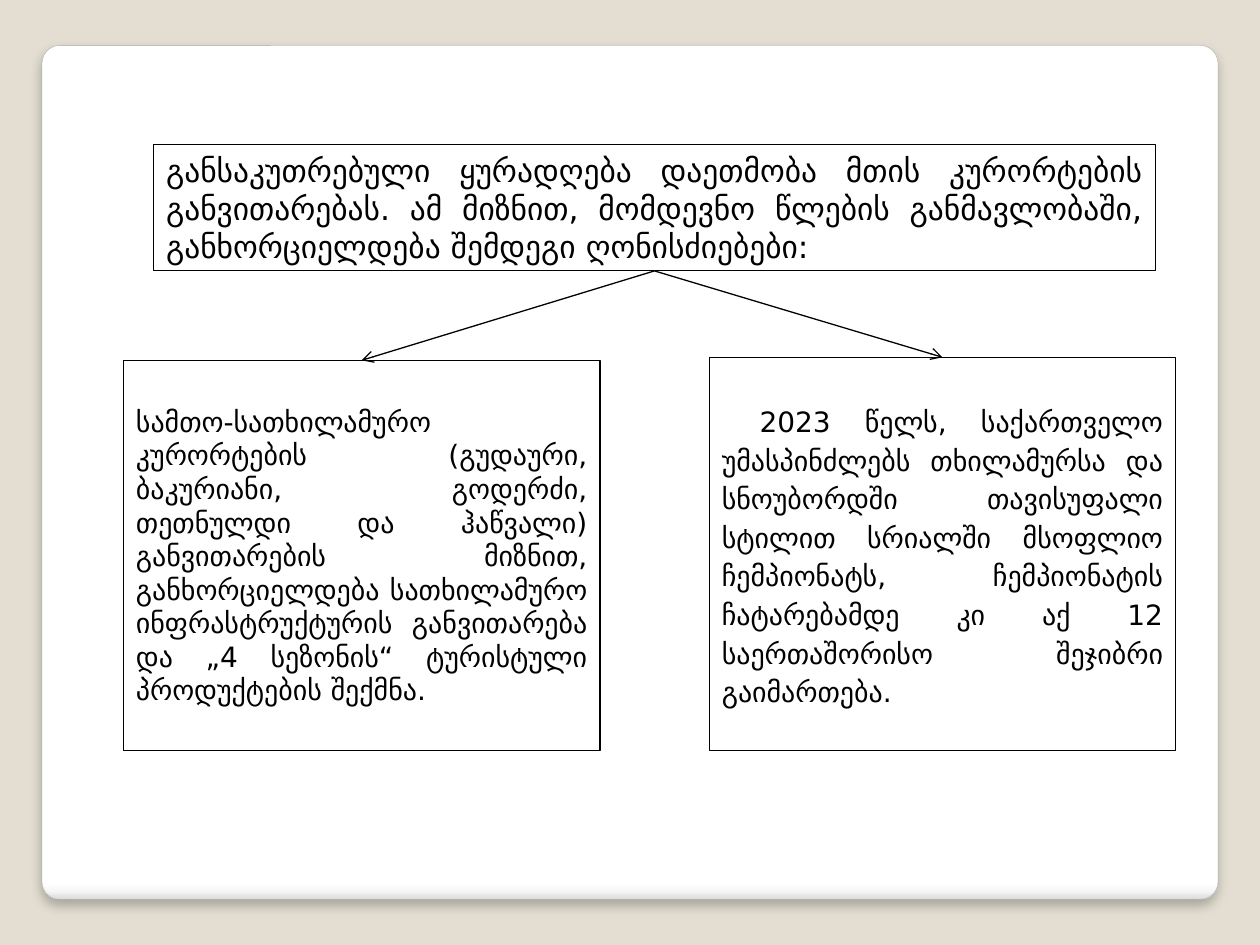
from lxml.etree import SubElement
from pptx import Presentation
from pptx.dml.color import RGBColor
from pptx.enum.shapes import MSO_CONNECTOR as Connector, MSO_SHAPE as Shape
from pptx.enum.text import MSO_ANCHOR as Anchor, PP_ALIGN as Align
from pptx.oxml import parse_xml
from pptx.oxml.ns import nsdecls, qn
from pptx.util import Pt

FONT = "DejaVu Sans"
BLACK, WHITE, SAND, GREY = "000000", "FFFFFF", "E3DED1", "A4A4A4"
CARD = (24, 26, 672, 488)
CARD_STOPS = [(0, WHITE), (98, WHITE), (99, "F7F7F7"), (100, "DADADA")]

GOAL = {
    "text": "განსაკუთრებული ყურადღება დაეთმობა მთის კურორტების განვითარებას. "
            "ამ მიზნით, მომდევნო წლების განმავლობაში, განხორციელდება შემდეგი ღონისძიებები:",
    "area": (87.8, 82.8, 572.4, 72), "size": 18,
}
MEASURES = [
    {
        "text": "სამთო-სათხილამურო კურორტების (გუდაური, ბაკურიანი, გოდერძი, თეთნულდი "
                "და ჰაწვალი) განვითარების მიზნით, განხორციელდება სათხილამურო "
                "ინფრასტრუქტურის განვითარება და „4 სეზონის“ ტურისტული პროდუქტების შექმნა.",
        "area": (70.6, 205.9, 272.2, 223), "size": 16,
    },
    {
        "text": "2023 წელს, საქართველო უმასპინძლებს თხილამურსა და სნოუბორდში თავისუფალი "
                "სტილით სრიალში მსოფლიო ჩემპიონატს, ჩემპიონატის ჩატარებამდე კი აქ 12 "
                "საერთაშორისო შეჯიბრი გაიმართება.",
        "area": (405.4, 204.2, 266.4, 224.7), "size": 16, "indent": 21.6, "spacing": 1.15,
    },
]


def color(value):
    return RGBColor.from_string(value)


def add_card(page):
    card = page.shapes.add_shape(Shape.ROUNDED_RECTANGLE, *map(Pt, CARD))
    card.adjustments[0] = 0.021
    card.line.color.rgb = color(GREY)
    card.line.width = Pt(0.16)
    card.fill.gradient()
    card.fill.gradient_angle = 270
    stops = card.fill._fill._gradFill.find(qn("a:gsLst"))
    stops.clear()
    for percent, value in CARD_STOPS:
        stop = SubElement(stops, qn("a:gs"), pos=str(percent * 1000))
        SubElement(stop, qn("a:srgbClr"), val=value)
    card._element.spPr.append(parse_xml(
        f'<a:effectLst {nsdecls("a")}><a:outerShdw blurRad="{Pt(6)}" dist="{Pt(4)}" '
        f'dir="5400000" algn="tl" rotWithShape="0"><a:srgbClr val="{BLACK}">'
        '<a:alpha val="25000"/></a:srgbClr></a:outerShdw></a:effectLst>'))


def add_box(page, text, *, area, size, indent=0, spacing=1):
    box = page.shapes.add_shape(Shape.RECTANGLE, *map(Pt, area))
    box.shadow.inherit = False
    box.fill.solid()
    box.fill.fore_color.rgb = color(WHITE)
    box.line.color.rgb = color(BLACK)
    box.line.width = Pt(0.75)
    box.text_frame.word_wrap = True
    box.text_frame.vertical_anchor = Anchor.MIDDLE
    para = box.text_frame.paragraphs[0]
    para.alignment = Align.JUSTIFY
    para.line_spacing = spacing
    para._p.get_or_add_pPr().set("indent", str(Pt(indent)))
    span = para.add_run()
    span.text = text
    span.font.name = FONT
    span.font.size = Pt(size)
    span.font.color.rgb = color(BLACK)
    return box


def add_arrow(page, source, target):
    arrow = page.shapes.add_connector(Connector.STRAIGHT, 0, 0, 0, 0)
    arrow.begin_connect(source, 2)
    arrow.end_connect(target, 0)
    arrow.line.color.rgb = color(BLACK)
    arrow.line.width = Pt(0.75)
    SubElement(arrow.line._get_or_add_ln(), qn("a:tailEnd"), type="arrow")
    SubElement(arrow._element.spPr, qn("a:effectLst"))


def main():
    deck = Presentation()
    deck.slide_width, deck.slide_height = Pt(720), Pt(540)
    page = deck.slides.add_slide(deck.slide_layouts[6])
    page.background.fill.solid()
    page.background.fill.fore_color.rgb = color(SAND)
    add_card(page)
    goal = add_box(page, **GOAL)
    for measure in MEASURES:
        add_arrow(page, goal, add_box(page, **measure))
    deck.save("out.pptx")


if __name__ == "__main__":
    main()
